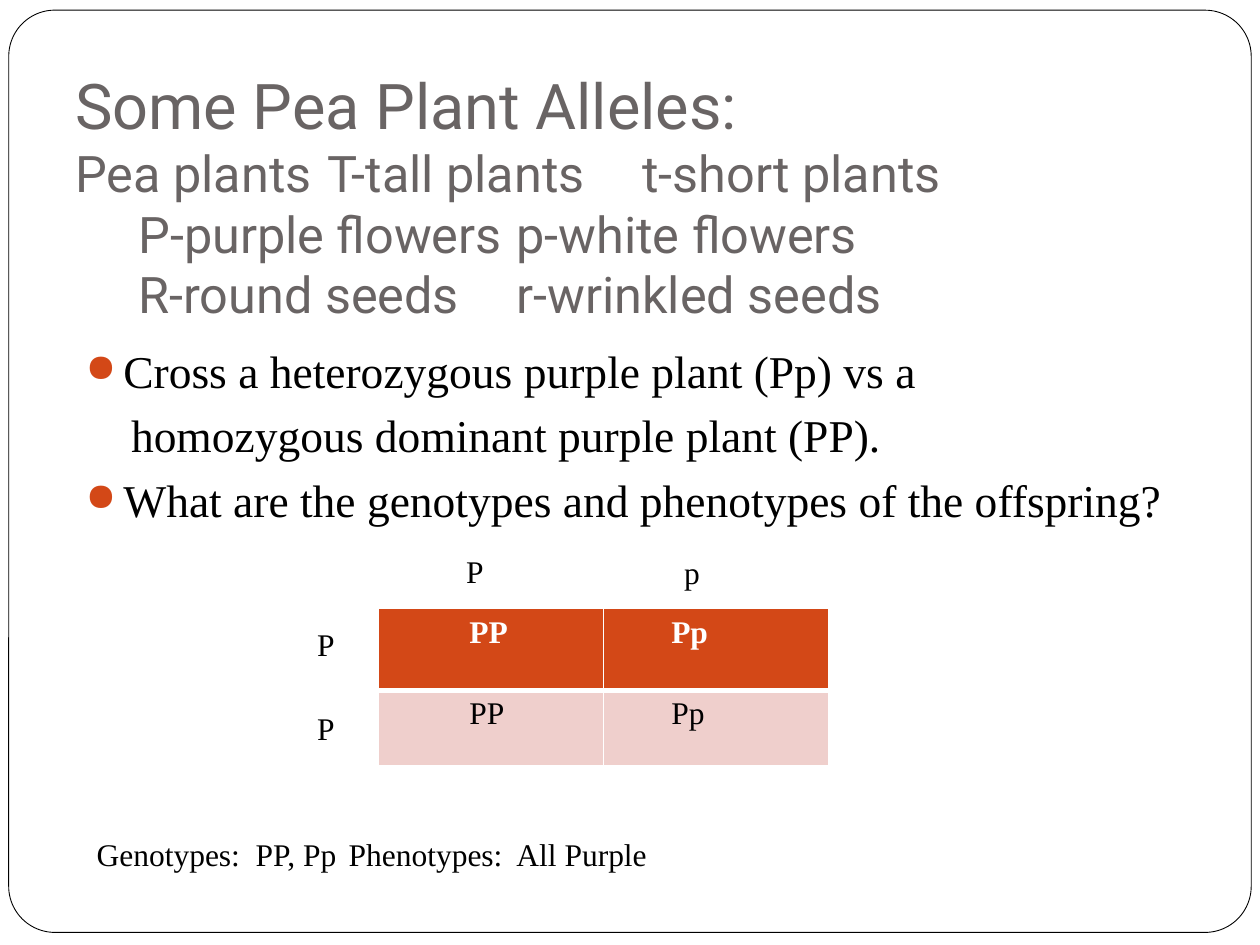
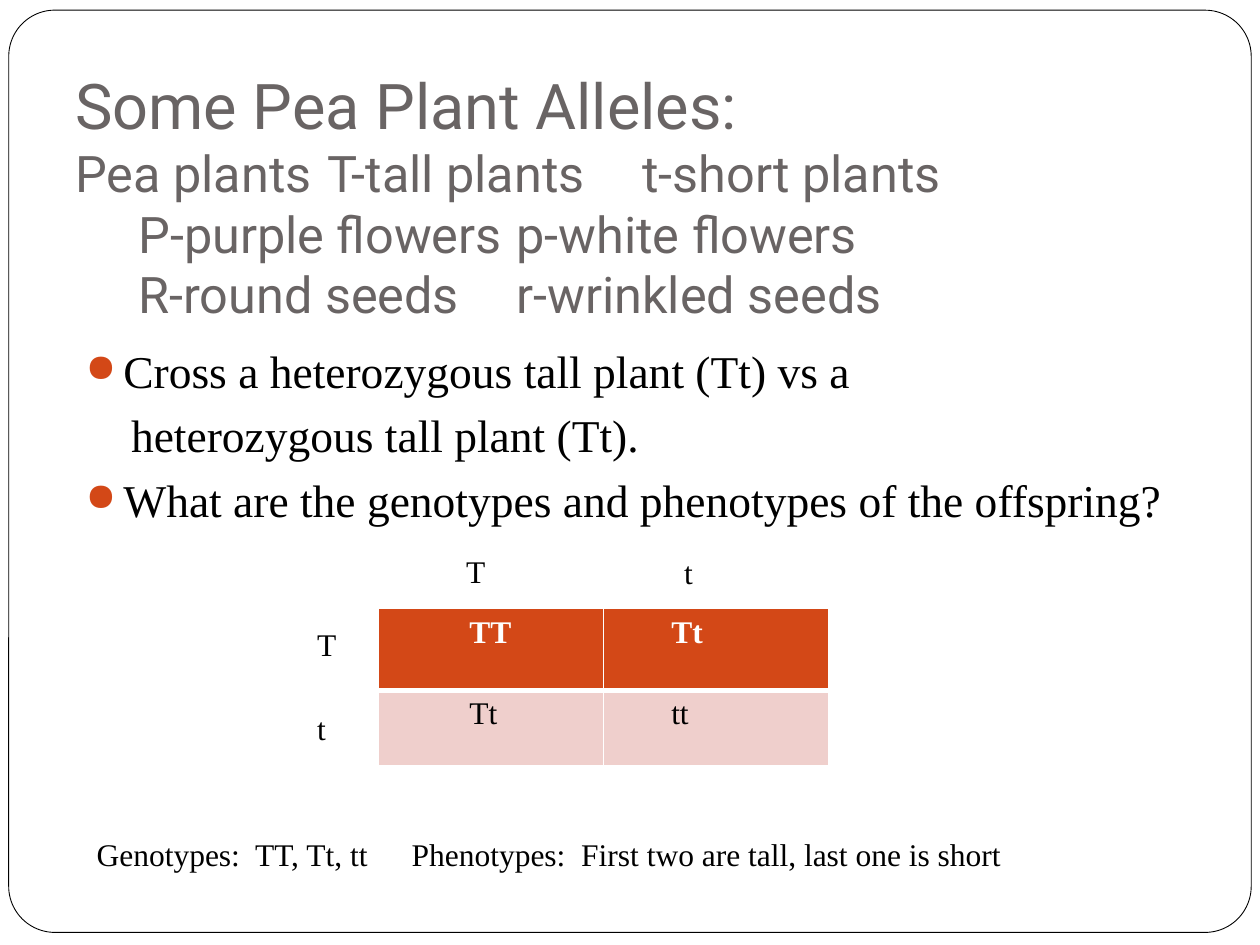
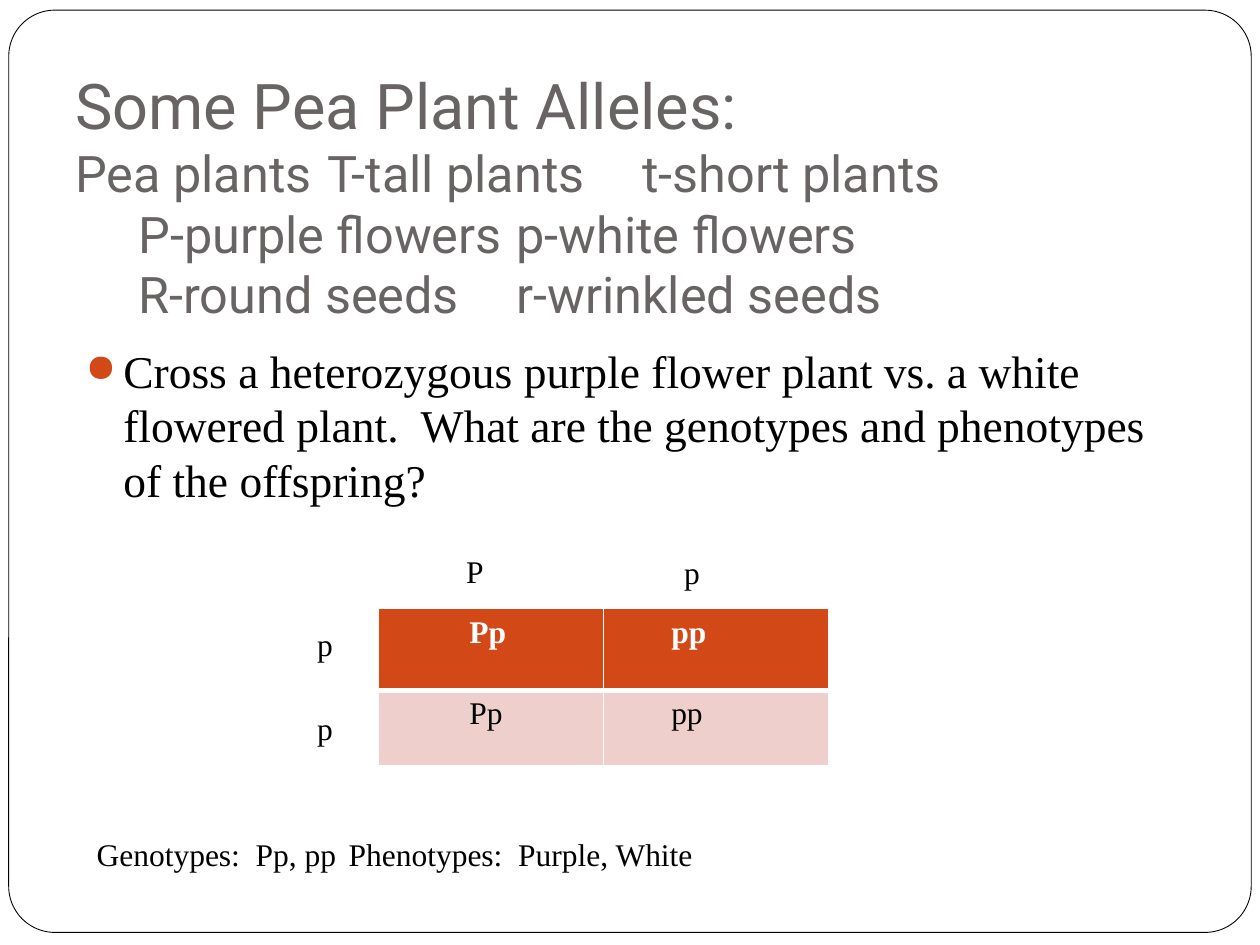
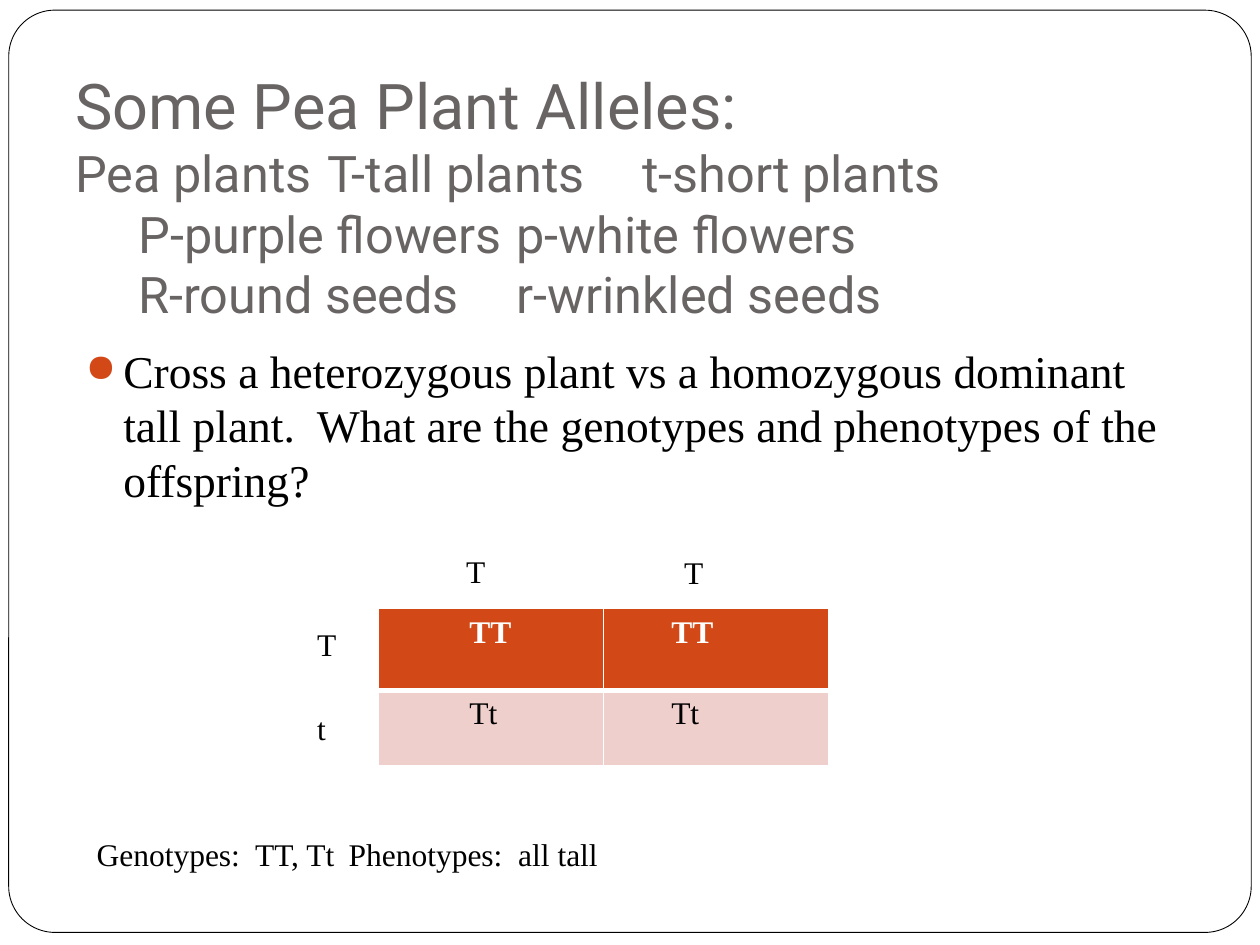
"""Build four slides that solve Punnett squares for pea plant crosses."""
from pptx import Presentation
from pptx.dml.color import RGBColor
from pptx.enum.shapes import MSO_SHAPE
from pptx.enum.text import MSO_ANCHOR, MSO_AUTO_SIZE
from pptx.oxml.xmlchemy import OxmlElement
from pptx.util import Pt

COLORS = {
    "paper": "FFFFFF",
    "ink": "000000",
    "title": "696464",
    "accent": "D34817",
    "tint": "EFCFCC",
}
TITLE_FONT = "Roboto"
BODY_FONT = "Times New Roman"
TITLE_LINES = [
    ("Some Pea Plant Alleles:", 36, ()),
    ("Pea plants\tT-tall plants\tt-short plants", 28.8, (155.5, 316.5)),
    ("\tP-purple flowers\tp-white flowers", 28.8, (155.5, 376.5)),
    ("\tR-round seeds\tr-wrinkled seeds", 28.8, (155.5, 359.5)),
]
QUESTION = "What are the genotypes and phenotypes of the offspring?"
BODY_INDENT = 21.6
CONTINUATION_INDENT = 26
TABLE_LEFT, TABLE_TOP = 216, 347.8
COLUMN_WIDTH = 128.9
ROW_HEIGHTS = (46.8, 43.2)
CELL_INSETS = (52.2, 38.7)
LABEL_SIZE = (34.6, 28.8)
TOP_LABELS = ((259.2, 311.8), (383.8, 312.5))
SIDE_LABELS = ((174.2, 353.5), (174.2, 401.8))

CROSSES = [
    {
        "body": [
            ("Cross a heterozygous purple plant (Pp) vs a", True),
            ("homozygous dominant purple plant (PP).", False),
            (QUESTION, True),
        ],
        "top": "Pp", "side": "PP",
        "offspring": [("PP", "Pp"), ("PP", "Pp")],
        "answer": "Genotypes:  PP, Pp\tPhenotypes:  All Purple",
        "answer_tab": 240,
    },
    {
        "body": [
            ("Cross a heterozygous tall plant (Tt) vs a", True),
            ("heterozygous tall plant (Tt).", False),
            (QUESTION, True),
        ],
        "top": "Tt", "side": "Tt",
        "offspring": [("TT", "Tt"), ("Tt", "tt")],
        "answer": "Genotypes:  TT, Tt, tt\tPhenotypes:  First two are tall, last one is short",
        "answer_tab": 253.5,
    },
    {
        "body": [
            ("Cross a heterozygous purple flower plant vs. a white flowered plant.  " + QUESTION, True),
        ],
        "top": "Pp", "side": "pp",
        "offspring": [("Pp", "pp"), ("Pp", "pp")],
        "answer": "Genotypes:  Pp, pp\tPhenotypes:  Purple, White",
        "answer_tab": 240,
    },
    {
        "body": [
            ("Cross a heterozygous plant vs a homozygous dominant tall plant.  " + QUESTION, True),
        ],
        "top": "TT", "side": "Tt",
        "offspring": [("TT", "TT"), ("Tt", "Tt")],
        "answer": "Genotypes:  TT, Tt\tPhenotypes:  all tall",
        "answer_tab": 239,
    },
]


def rgb(name):
    return RGBColor.from_string(COLORS[name])


def add_element(parent, tag, **attributes):
    element = OxmlElement(tag)
    for name, value in attributes.items():
        element.set(name, str(value))
    parent.append(element)
    return element


def add_solid_color(parent, name):
    add_element(parent, "a:srgbClr", val=COLORS[name])


def write_text(text_frame, text, *, size=18, font=BODY_FONT, color="ink", bold=False,
               bullet=False, margin=0, space_before=0, tabs=()):
    paragraph = text_frame.paragraphs[0]
    if paragraph.runs:
        paragraph = text_frame.add_paragraph()
    run = paragraph.add_run()
    run.text = text
    run.font.size = Pt(size)
    run.font.name = font
    run.font.bold = bold
    run.font.color.rgb = rgb(color)
    paragraph.space_before = Pt(space_before)
    properties = paragraph._p.get_or_add_pPr()
    properties.set("marL", str(Pt(margin)))
    properties.set("indent", str(Pt(-margin if bullet else 0)))
    if bullet:
        add_solid_color(add_element(properties, "a:buClr"), "accent")
        add_element(properties, "a:buSzPct", val=85000)
        add_element(properties, "a:buChar", char="●")
    else:
        add_element(properties, "a:buNone")
    if tabs:
        tab_list = add_element(properties, "a:tabLst")
        for position in tabs:
            add_element(tab_list, "a:tab", pos=Pt(position), algn="l")


class Deck:
    """Hold the shared style and the current slide."""

    def __init__(self):
        self.presentation = Presentation()
        self.presentation.slide_width = Pt(720)
        self.presentation.slide_height = Pt(540)
        self.slide = None

    def new_slide(self):
        self.slide = self.presentation.slides.add_slide(self.presentation.slide_layouts[6])
        self.slide.background.fill.solid()
        self.slide.background.fill.fore_color.rgb = rgb("paper")
        self.frame()
        self.title()

    def frame(self):
        shape = self.slide.shapes.add_shape(
            MSO_SHAPE.ROUNDED_RECTANGLE, Pt(5), Pt(5.8), Pt(710), Pt(527))
        shape.adjustments[0] = 0.05
        shape.shadow.inherit = False
        shape.fill.solid()
        shape.fill.fore_color.rgb = rgb("paper")
        shape.line.color.rgb = rgb("ink")
        shape.line.width = Pt(0.5)

    def text_box(self, left, top, width, height):
        shape = self.slide.shapes.add_textbox(Pt(left), Pt(top), Pt(width), Pt(height))
        shape.text_frame.word_wrap = True
        return shape.text_frame

    def title(self):
        text_frame = self.text_box(36, 21.6, 648, 170.6)
        text_frame.vertical_anchor = MSO_ANCHOR.BOTTOM
        text_frame.margin_bottom = Pt(7.2)
        for text, size, tabs in TITLE_LINES:
            write_text(text_frame, text, size=size, font=TITLE_FONT, color="title", tabs=tabs)

    def body(self, lines):
        text_frame = self.text_box(41.8, 192.2, 648, 126)
        for text, bullet in lines:
            margin = BODY_INDENT if bullet else CONTINUATION_INDENT
            write_text(text_frame, text, size=26, bullet=bullet, margin=margin, space_before=5.8)

    def label(self, text, left, top, width=LABEL_SIZE[0], tabs=()):
        text_frame = self.text_box(left, top, width, LABEL_SIZE[1])
        text_frame.auto_size = MSO_AUTO_SIZE.SHAPE_TO_FIT_TEXT
        write_text(text_frame, text, tabs=tabs)

    def borders(self, cell, **widths):
        properties = cell._tc.get_or_add_tcPr()
        for index, side in enumerate("LRTB"):
            line = OxmlElement(f"a:ln{side}")
            line.set("w", str(Pt(widths.get(side, 1))))
            add_solid_color(add_element(line, "a:solidFill"), "paper")
            properties.insert(index, line)

    def punnett_square(self, offspring):
        table = self.slide.shapes.add_table(
            2, 2, Pt(TABLE_LEFT), Pt(TABLE_TOP), Pt(2 * COLUMN_WIDTH), Pt(sum(ROW_HEIGHTS))).table
        table.horz_banding = False
        for column in table.columns:
            column.width = Pt(COLUMN_WIDTH)
        for row_index, genotypes in enumerate(offspring):
            header = row_index == 0
            table.rows[row_index].height = Pt(ROW_HEIGHTS[row_index])
            for column_index, genotype in enumerate(genotypes):
                cell = table.cell(row_index, column_index)
                cell.margin_left = Pt(CELL_INSETS[column_index])
                cell.fill.solid()
                cell.fill.fore_color.rgb = rgb("accent" if header else "tint")
                self.borders(cell, **{"B" if header else "T": 3})
                write_text(cell.text_frame, genotype, bold=header,
                           color="paper" if header else "ink")

    def cross(self, cross):
        self.new_slide()
        self.body(cross["body"])
        self.punnett_square(cross["offspring"])
        alleles = cross["top"] + cross["side"]
        for allele, position in zip(alleles, TOP_LABELS + SIDE_LABELS):
            self.label(allele, *position)
        self.label(cross["answer"], 48.2, 473.8, width=648, tabs=[cross["answer_tab"]])


def main():
    deck = Deck()
    for cross in CROSSES:
        deck.cross(cross)
    deck.presentation.save("out.pptx")


if __name__ == "__main__":
    main()
